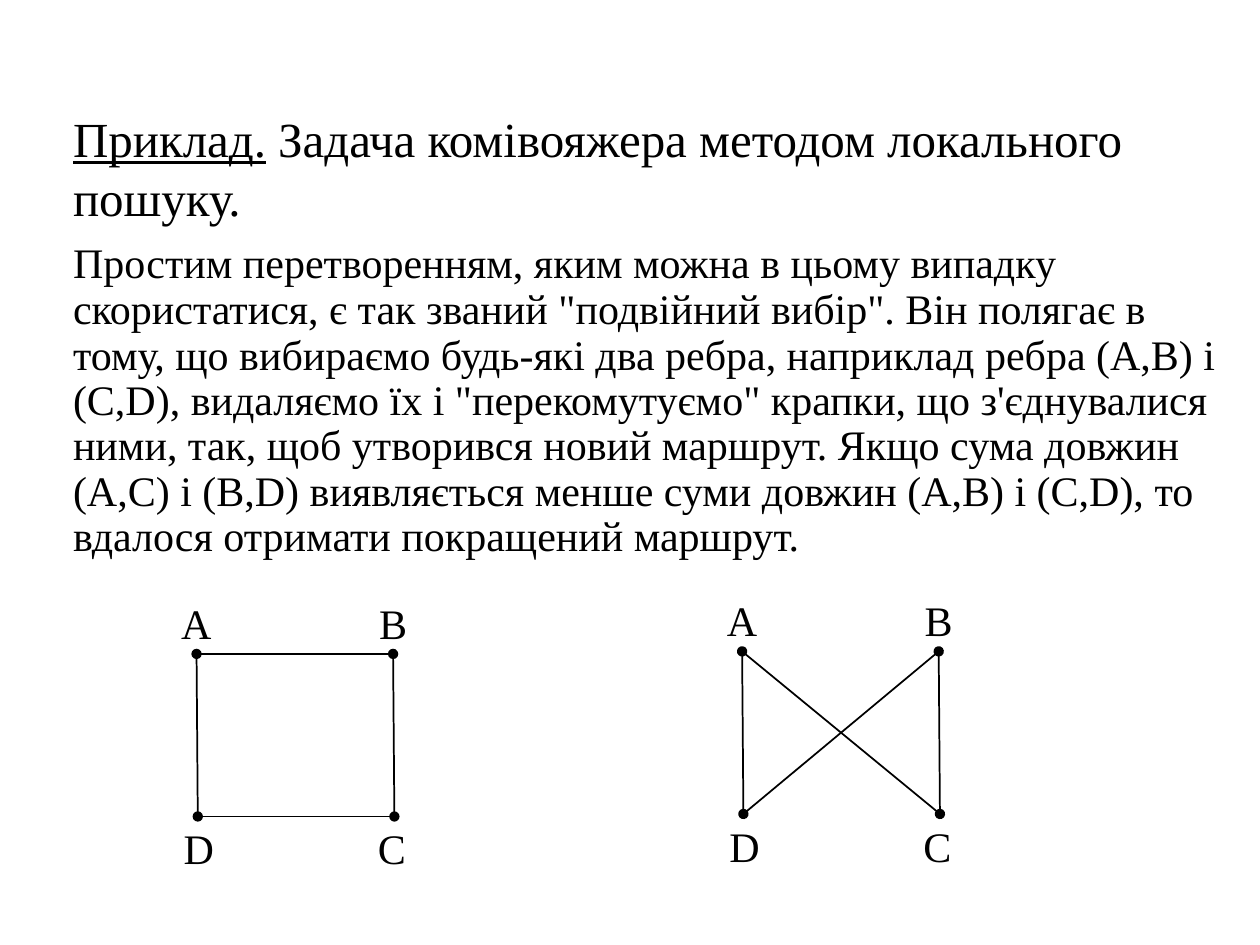
from lxml.etree import SubElement as Sub
from pptx import Presentation
from pptx.dml.color import RGBColor as Rgb
from pptx.enum.shapes import MSO_CONNECTOR as Line
from pptx.enum.text import MSO_AUTO_SIZE as Fit
from pptx.oxml.ns import qn
from pptx.util import Inches, Pt

THEME = {"font": "Times New Roman", "ink": Rgb(0, 0, 0), "head": 28, "body": 24,
         "line": 1}

# Each paragraph: line spacing, then runs of (text, size, underline).
# The tab carries the first line to the hanging indent.
TEXT = [
    (1.0, [("\t", "head", False),
           ("Приклад.", "head", True),
           (" Задача комівояжера методом локального пошуку.", "head", False)]),
    (0.9, [("\t", "head", False),
           ("Простим перетворенням, яким можна в цьому випадку скористатися, "
            "є так званий \"подвійний вибір\". Він полягає в тому, що вибираємо "
            "будь-які два ребра, наприклад ребра (А,В) і (С,D), видаляємо їх і "
            "\"перекомутуємо\" крапки, що з'єднувалися ними, так, щоб утворився "
            "новий маршрут. Якщо сума довжин (А,С) і (В,D) виявляється менше "
            "суми довжин (А,В) і (С,D), то вдалося отримати покращений маршрут.",
            "body", False)]),
]

# Offsets from the corner of a graph: label box (left, top, width) and node
LABELS = {"A": (0, 0, 0.44), "B": (1.57, 0, 0.42),
          "D": (0.02, 1.79, 0.44), "C": (1.56, 1.79, 0.42)}
NODES = {"A": (0.22, 0.5), "B": (1.78, 0.5), "D": (0.23, 1.79), "C": (1.79, 1.79)}
SIDES = ["BC", "AD"]
GRAPHS = [((1.34, 4.69), ["AB", "DC"]),
          ((5.67, 4.67), ["AC", "DB"])]


def add_run(para, text, size="body", under=False):
    run = para.add_run()
    run.text = text
    font = run.font
    font.name, font.size = THEME["font"], Pt(THEME[size])
    font.color.rgb = THEME["ink"]
    font.underline = under


def add_body(slide):
    box = slide.shapes.add_textbox(Inches(0), Inches(0.81), Inches(10), Inches(3.83))
    frame = box.text_frame
    frame.word_wrap = True
    frame.margin_left = frame.margin_right = Inches(0.2)
    for i, (gap, runs) in enumerate(TEXT):
        para = frame.paragraphs[0] if i == 0 else frame.add_paragraph()
        para.line_spacing = gap
        para.space_before = Pt(0.2 * THEME["head"])
        props = para._p.get_or_add_pPr()
        props.set("marL", str(Inches(0.38)))
        props.set("indent", str(Inches(-0.38)))
        for text, size, under in runs:
            add_run(para, text, size=size, under=under)


def add_edge(group, start, end, dots):
    """Draw a line from start to end, with a dot at both ends if dots is set."""
    edge = group.shapes.add_connector(
        Line.STRAIGHT, *(Inches(v) for v in (*start, *end)))
    edge.line.color.rgb = THEME["ink"]
    edge.line.width = Pt(THEME["line"])
    if dots:
        for tag in ("a:headEnd", "a:tailEnd"):
            Sub(edge.line._get_or_add_ln(), qn(tag), type="oval")
    Sub(edge._element.spPr, qn("a:effectLst"))


def add_graph(slide, corner, swaps):
    """Draw four labelled nodes, the fixed sides and the swapped pair of edges."""
    x, y = corner
    group = slide.shapes.add_group_shape()
    for name, (dx, dy, wide) in LABELS.items():
        box = group.shapes.add_textbox(
            Inches(x + dx), Inches(y + dy), Inches(wide), Inches(0.5))
        frame = box.text_frame
        frame.word_wrap = False
        frame.auto_size = Fit.SHAPE_TO_FIT_TEXT
        add_run(frame.paragraphs[0], name)
    for pair in SIDES + swaps:
        start, end = ((x + NODES[n][0], y + NODES[n][1]) for n in pair)
        add_edge(group, start, end, dots=pair in swaps)


def main():
    deck = Presentation()
    deck.slide_width, deck.slide_height = Inches(10), Inches(7.5)
    slide = deck.slides.add_slide(deck.slide_layouts[6])
    add_body(slide)
    for corner, swaps in GRAPHS:
        add_graph(slide, corner, swaps)
    deck.save("out.pptx")


if __name__ == "__main__":
    main()
